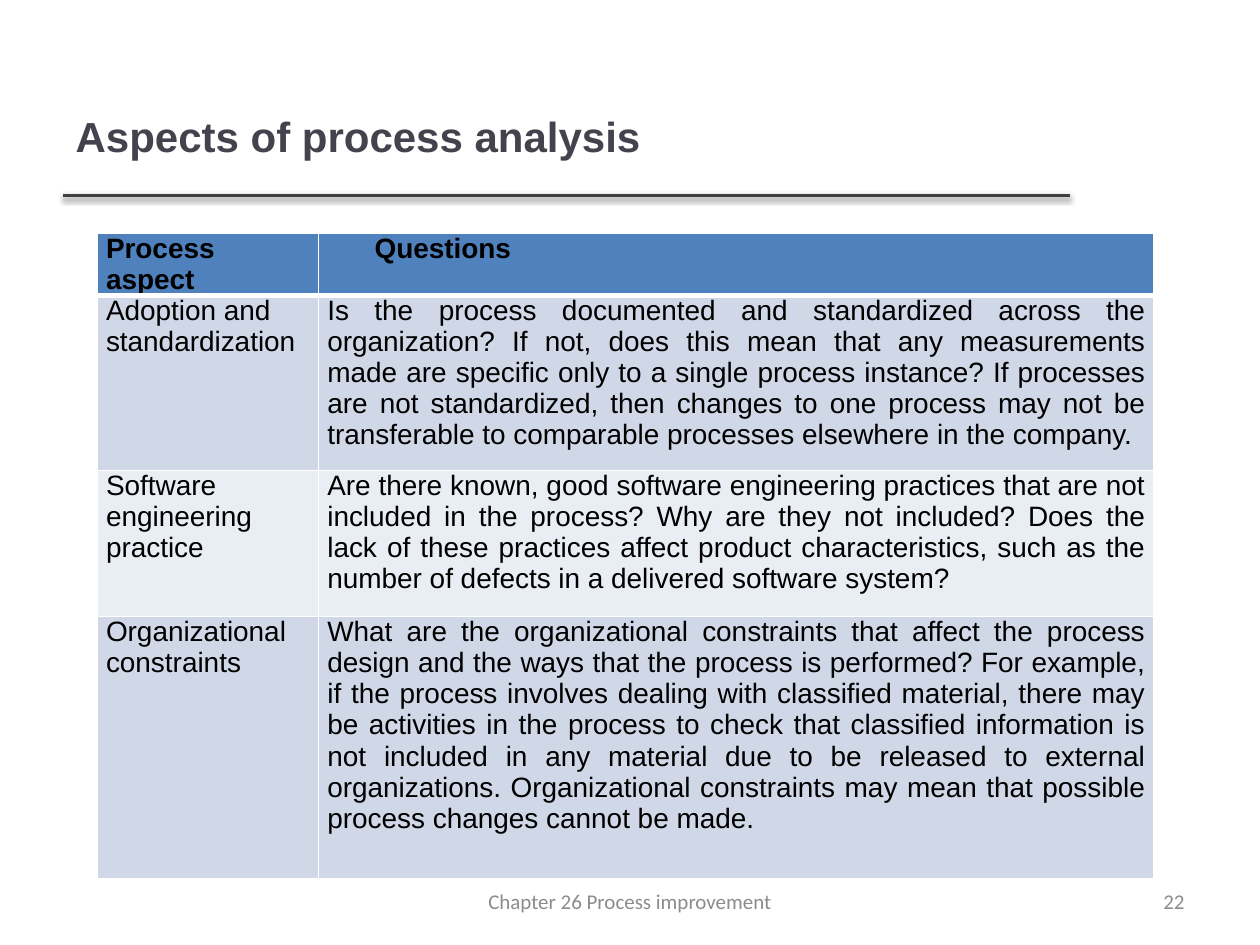
from dataclasses import dataclass

import pptx
import pptx.dml.color
import pptx.enum.shapes
import pptx.enum.text
import pptx.oxml
import pptx.oxml.ns
import pptx.util

Pt = pptx.util.Pt
ALIGN = pptx.enum.text.PP_ALIGN
MIDDLE = pptx.enum.text.MSO_ANCHOR.MIDDLE


@dataclass(frozen=True)
class Theme:
    title: str = "46424D"
    rule: str = "404040"
    text: str = "000000"
    footer: str = "8C8C8C"
    header_fill: str = "4F81BD"
    bands: tuple[str, str] = ("D0D8E8", "E9EDF4")
    border: str = "FFFFFF"
    font: str = "Arial"
    footer_font: str = "Calibri"
    title_size: int = 24
    table_size: int = 16
    footer_size: int = 12


@dataclass(frozen=True)
class Aspect:
    name: str
    questions: str
    height: float


@dataclass(frozen=True)
class Footer:
    text: str
    left: float
    width: float
    align: ALIGN


THEME = Theme()
TAB_STOPS = (27, 54, 81)
COLUMN_WIDTHS = (126.5, 477.5)

HEADER = Aspect("Process aspect", "Questions", 31.5)
ASPECTS = (
    Aspect(
        "Adoption and standardization",
        "Is the process documented and standardized across the organization? "
        "If not, does this mean that any measurements made are specific only to "
        "a single process instance? If processes are not standardized, then "
        "changes to one process may not be transferable to comparable processes "
        "elsewhere in the company.",
        100,
    ),
    Aspect(
        "Software engineering practice",
        "Are there known, good software engineering practices that are not "
        "included in the process? Why are they not included? Does the lack of "
        "these practices affect product characteristics, such as the number of "
        "defects in a delivered software system?",
        83.5,
    ),
    Aspect(
        "Organizational constraints",
        "What are the organizational constraints that affect the process design "
        "and the ways that the process is performed? For example, if the process "
        "involves dealing with classified material, there may be activities in "
        "the process to check that classified information is not included in any "
        "material due to be released to external organizations. Organizational "
        "constraints may mean that possible process changes cannot be made.",
        150,
    ),
)
FOOTERS = (
    Footer("22", 516, 168, ALIGN.RIGHT),
    Footer("Chapter 26 Process improvement", 246, 228, ALIGN.CENTER),
)


def rgb(value: str) -> pptx.dml.color.RGBColor:
    return pptx.dml.color.RGBColor.from_string(value)


def style(paragraph, font: str, size: float, color: str, bold: bool = False) -> None:
    for run in paragraph.runs:
        run.font.name = font
        run.font.size = Pt(size)
        run.font.bold = bold
        run.font.color.rgb = rgb(color)


def add_xml(parent, xml: str) -> None:
    tag, rest = xml.split(" ", 1)
    namespace = pptx.oxml.ns.nsdecls("a")
    parent.append(pptx.oxml.parse_xml(f"<a:{tag} {namespace} {rest}"))


def draw_title(slide, text: str) -> None:
    title = slide.shapes.title
    title.left, title.top, title.width, title.height = Pt(36), Pt(21.6), Pt(575), Pt(111.6)
    frame = title.text_frame
    frame.text = text
    frame.vertical_anchor = MIDDLE
    frame.paragraphs[0].alignment = ALIGN.LEFT
    style(frame.paragraphs[0], THEME.font, THEME.title_size, THEME.title, True)


def draw_rule(slide) -> None:
    rule = slide.shapes.add_connector(
        pptx.enum.shapes.MSO_CONNECTOR.STRAIGHT, Pt(36), Pt(111.6), Pt(611.3), Pt(111.6)
    )
    rule.line.color.rgb = rgb(THEME.rule)
    rule.line.width = Pt(2)
    # Soft shadow straight below the line
    add_xml(
        rule._element.spPr,
        f'effectLst ><a:outerShdw blurRad="{Pt(3.1)}" dist="{Pt(1.6)}" dir="5400000" '
        'rotWithShape="0"><a:srgbClr val="000000"><a:alpha val="38000"/></a:srgbClr>'
        "</a:outerShdw></a:effectLst>",
    )


def draw_cell(cell, text: str, fill: str, align: ALIGN, bold: bool,
              top: float, bottom: float, indent: float) -> None:
    # Borders come before the fill in the cell properties
    properties = cell._tc.get_or_add_tcPr()
    for side, width in (("L", 1), ("R", 1), ("T", top), ("B", bottom)):
        add_xml(
            properties,
            f'ln{side} w="{Pt(width)}"><a:solidFill><a:srgbClr val="{THEME.border}"/>'
            f"</a:solidFill></a:ln{side}>",
        )
    cell.fill.solid()
    cell.fill.fore_color.rgb = rgb(fill)
    cell.margin_left = cell.margin_right = Pt(5)
    cell.margin_top = cell.margin_bottom = Pt(0)

    cell.text_frame.text = text
    paragraph = cell.text_frame.paragraphs[0]
    layout = paragraph._p.get_or_add_pPr()
    layout.set("marL", "0")
    layout.set("indent", str(Pt(indent)))
    stops = "".join(f'<a:tab pos="{Pt(stop)}" algn="l"/>' for stop in TAB_STOPS)
    add_xml(layout, f"tabLst >{stops}</a:tabLst>")
    paragraph.alignment = align
    paragraph.space_after = Pt(3)
    style(paragraph, THEME.font, THEME.table_size, THEME.text, bold)


def draw_table(slide) -> None:
    rows = (HEADER, *ASPECTS)
    table = slide.shapes.add_table(
        len(rows), len(COLUMN_WIDTHS), Pt(55.6), Pt(133.2),
        Pt(sum(COLUMN_WIDTHS)), Pt(sum(row.height for row in rows)),
    ).table
    for column, width in zip(table.columns, COLUMN_WIDTHS):
        column.width = Pt(width)
    for index, row in enumerate(rows):
        table.rows[index].height = Pt(row.height)
        is_header = index == 0
        fill = THEME.header_fill if is_header else THEME.bands[(index - 1) % 2]
        top, bottom = (3 if index == 1 else 1), (3 if is_header else 1)
        name_align = ALIGN.JUSTIFY if is_header else ALIGN.LEFT
        draw_cell(table.cell(index, 0), row.name, fill, name_align,
                  is_header, top, bottom, 0)
        draw_cell(table.cell(index, 1), row.questions, fill, ALIGN.JUSTIFY,
                  is_header, top, bottom, TAB_STOPS[0] if is_header else 0)


def draw_footer(slide, footer: Footer) -> None:
    box = slide.shapes.add_textbox(Pt(footer.left), Pt(500.5), Pt(footer.width), Pt(28.75))
    frame = box.text_frame
    frame.word_wrap = True
    frame.vertical_anchor = MIDDLE
    frame.text = footer.text
    frame.paragraphs[0].alignment = footer.align
    style(frame.paragraphs[0], THEME.footer_font, THEME.footer_size, THEME.footer)


def main() -> None:
    deck = pptx.Presentation()
    deck.slide_width, deck.slide_height = Pt(720), Pt(540)
    slide = deck.slides.add_slide(deck.slide_layouts.get_by_name("Title Only"))
    draw_rule(slide)
    draw_title(slide, "Aspects of process analysis")
    draw_table(slide)
    for footer in FOOTERS:
        draw_footer(slide, footer)
    deck.save("out.pptx")


if __name__ == "__main__":
    main()
